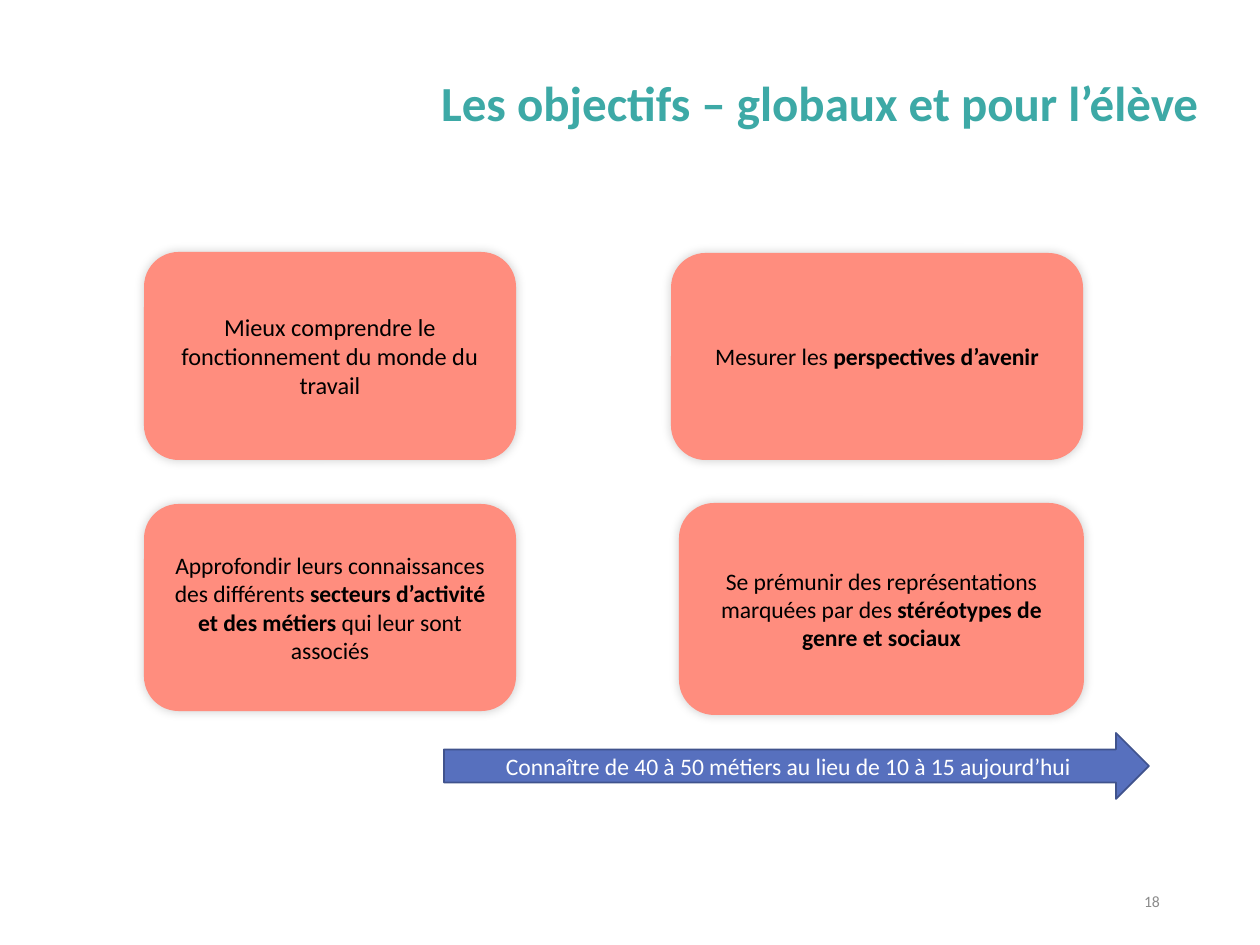
from lxml import etree
from pptx import Presentation
from pptx.dml.color import RGBColor
from pptx.enum.shapes import MSO_SHAPE as Shape
from pptx.enum.text import MSO_ANCHOR as Anchor, MSO_AUTO_SIZE as AutoSize, PP_ALIGN as Align
from pptx.oxml import parse_xml
from pptx.oxml.ns import nsdecls
from pptx.util import Emu, Pt

PX_PER_INCH = 126
FONT = "Calibri"
TEAL = RGBColor(0x3D, 0xA9, 0xA6)
CORAL = RGBColor(0xFF, 0x8D, 0x7E)
BLUE = RGBColor(0x57, 0x70, 0xBE)
DARK_BLUE = RGBColor(0x40, 0x53, 0x8D)
GRAY = RGBColor(0x8C, 0x8C, 0x8C)
BLACK = RGBColor(0, 0, 0)
WHITE = RGBColor(0xFF, 0xFF, 0xFF)

# Card box in px, text size, and (text, bold) runs
CARDS = [
    ((144, 252, 372, 208), 13.9,
     [("Mieux comprendre le fonctionnement du monde du travail", False)]),
    ((671, 253, 412, 207), 13.5,
     [("Mesurer les ", False), ("perspectives d’avenir", True)]),
    ((144, 504, 372, 207), 13.5,
     [("Approfondir leurs connaissances des différents ", False),
      ("secteurs d’activité et des métiers", True),
      (" qui leur sont associés", False)]),
    ((679, 503, 405, 212), 13.5,
     [("Se prémunir des représentations marquées par des ", False),
      ("stéréotypes de genre et sociaux", True)]),
]


def px(length):
    return Emu(round(length * 914400 / PX_PER_INCH))


def write_text(shape, runs, size, color, align, margins=(13, 6)):
    frame = shape.text_frame
    frame.word_wrap = True
    frame.auto_size = AutoSize.NONE
    frame.vertical_anchor = Anchor.MIDDLE
    frame.margin_left = frame.margin_right = px(margins[0])
    frame.margin_top = frame.margin_bottom = px(margins[1])
    paragraph = frame.paragraphs[0]
    paragraph.alignment = align
    for text, bold in runs:
        run = paragraph.add_run()
        run.text = text
        run.font.bold = bold
    paragraph.font.name = FONT
    paragraph.font.size = Pt(size)
    paragraph.font.color.rgb = color
    return paragraph


def add_filled_shape(slide, kind, box, fill):
    shape = slide.shapes.add_shape(kind, *map(px, box))
    shape.shadow.inherit = False
    shape.fill.solid()
    shape.fill.fore_color.rgb = fill
    return shape


def add_soft_shadow(shape):
    effects = shape._element.spPr.find(
        "{http://schemas.openxmlformats.org/drawingml/2006/main}effectLst")
    shadow = parse_xml(
        f'<a:outerShdw {nsdecls("a")} blurRad="{Pt(6)}" dist="0" dir="13500000"/>')
    color = etree.SubElement(shadow, f"{{{shadow.nsmap['a']}}}srgbClr", val="000000")
    etree.SubElement(color, f"{{{shadow.nsmap['a']}}}alpha", val="20000")
    effects.append(shadow)


def add_title(slide, text):
    title = slide.shapes.title
    title.left, title.top, title.width, title.height = map(px, (386, 63, 821, 86))
    paragraph = write_text(title, [(text, True)], 28, TEAL, Align.RIGHT, (9, 5))
    paragraph.line_spacing = 0.9


def add_card(slide, box, size, runs):
    card = add_filled_shape(slide, Shape.ROUNDED_RECTANGLE, box, CORAL)
    card.line.fill.background()
    add_soft_shadow(card)
    write_text(card, runs, size, BLACK, Align.CENTER, (11, 11))


def add_arrow(slide, text):
    arrow = add_filled_shape(slide, Shape.RIGHT_ARROW, (444, 733, 705, 66), BLUE)
    arrow.line.color.rgb = DARK_BLUE
    arrow.line.width = Pt(1)
    write_text(arrow, [(text, False)], 13.5, WHITE, Align.CENTER)


def add_page_number(slide, number):
    box = slide.shapes.add_textbox(*map(px, (890, 876, 283, 50)))
    write_text(box, [(number, False)], 9, GRAY, Align.RIGHT)


def main():
    presentation = Presentation()
    presentation.slide_width = px(1260)
    presentation.slide_height = px(945)
    slide = presentation.slides.add_slide(presentation.slide_layouts[5])

    add_title(slide, "Les objectifs – globaux et pour l’élève")
    for box, size, runs in CARDS:
        add_card(slide, box, size, runs)
    add_arrow(slide, "Connaître de 40 à 50 métiers au lieu de 10 à 15 aujourd’hui")
    add_page_number(slide, "18")

    presentation.save("out.pptx")


if __name__ == "__main__":
    main()
